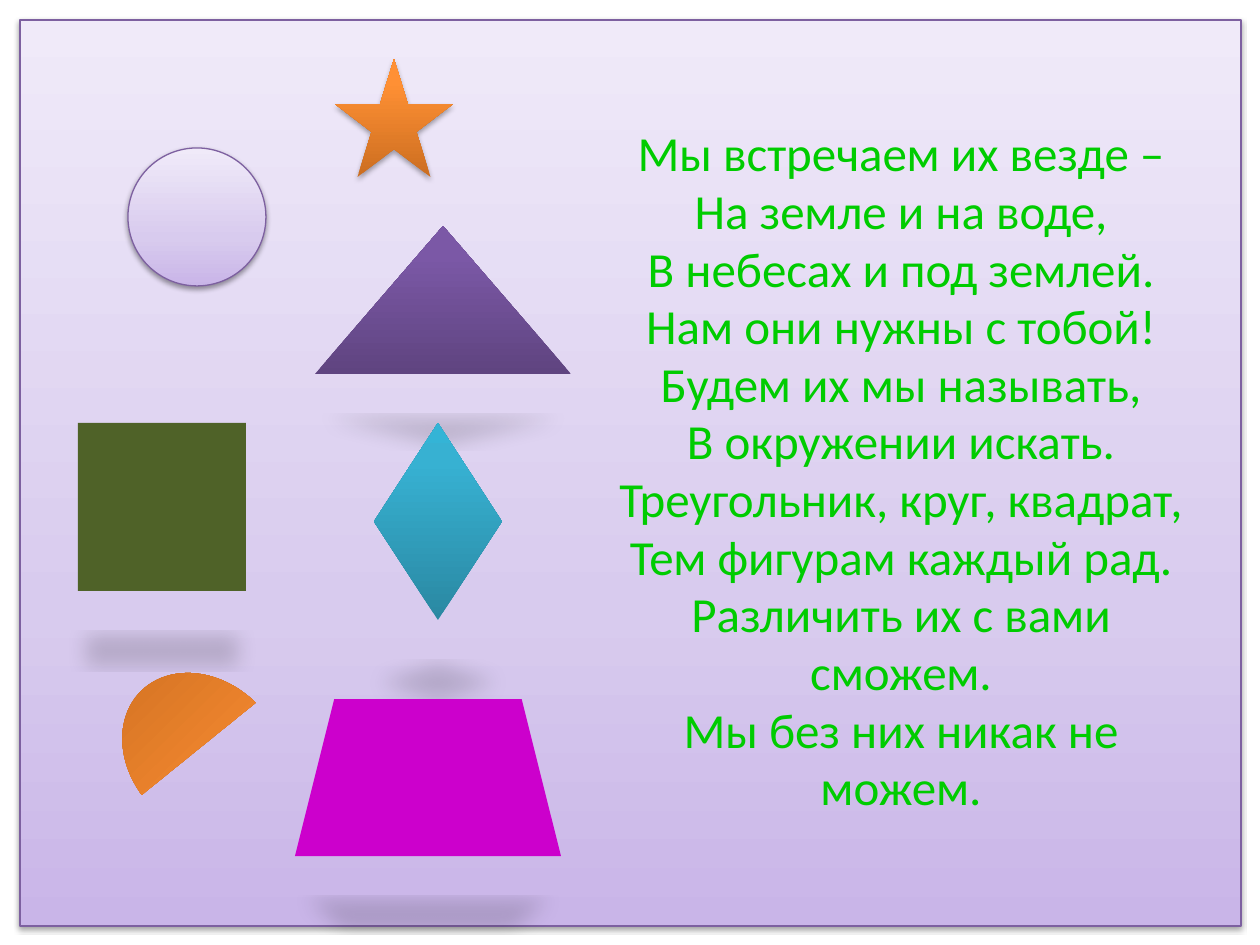
from copy import deepcopy
from dataclasses import dataclass

from lxml import etree
from pptx import Presentation
from pptx import util as u
from pptx.dml.color import RGBColor
from pptx.enum import shapes, text
from pptx.oxml.ns import qn

EMU_PER_PX = 914400 / 126
KIND = shapes.MSO_SHAPE

COLOURS = {
    "outline": "7D60A0",
    "poem": "00CC00",
    "olive": "4F6228",
    "magenta": "CC00CC",
    "shadow": "000000",
}
LILAC = ((0, "C9B5E8"), (0.35, "D8CBEE"), (1, "F0EAF9"))
PURPLE = ((0, "5F4480"), (0.8, "7B58A6"), (1, "7C57A8"))
TEAL = ((0, "2A88A2"), (0.8, "37B1D2"), (1, "34B4D6"))
ORANGE = ((0, "CC6E20"), (0.8, "FF9034"), (1, "FF9136"))

POEM = (
    "Мы встречаем их везде –",
    "На земле и на воде,",
    "В небесах и под землей.",
    "Нам они нужны с тобой!",
    "Будем их мы называть,",
    "В окружении искать.",
    "Треугольник, круг, квадрат,",
    "Тем фигурам каждый рад.",
    "Различить их с вами сможем.",
    "Мы без них никак не можем.",
)


@dataclass(frozen=True)
class Shadow:
    opacity: int
    blur: float
    distance: float
    width: int = 100
    height: int = 100


SOFT = Shadow(38, 3.1, 1.6)
STRONG = Shadow(35, 3.1, 1.8)
FLOOR = Shadow(15, 12, 25, width=90, height=-19)


@dataclass(frozen=True)
class Figure:
    kind: shapes.MSO_SHAPE
    left: int
    top: int
    width: int
    height: int
    paint: str | tuple
    shadow: Shadow
    outlined: bool = False
    rotation: float = 0
    adjustments: tuple = ()


BACKDROP = Figure(KIND.RECTANGLE, 20, 20, 1221, 906, LILAC, SOFT, outlined=True)
FIGURES = (
    Figure(KIND.OVAL, 128, 148, 138, 138, LILAC, SOFT, outlined=True),
    Figure(KIND.ISOSCELES_TRIANGLE, 315, 226, 256, 148, PURPLE, FLOOR),
    Figure(KIND.RECTANGLE, 78, 423, 168, 168, COLOURS["olive"], FLOOR),
    Figure(KIND.DIAMOND, 374, 423, 128, 197, TEAL, FLOOR),
    Figure(KIND.CHORD, 131, 665, 147, 181, ORANGE, FLOOR,
           rotation=135.6, adjustments=(7.41, 107.08)),
    Figure(KIND.TRAPEZOID, 295, 699, 266, 157, COLOURS["magenta"], FLOOR),
    Figure(KIND.STAR_5_POINT, 335, 59, 118, 118, ORANGE, STRONG),
)


def px(length: int) -> u.Emu:
    return u.Emu(round(length * EMU_PER_PX))


def paint_gradient(shape, stops: tuple) -> None:
    """Fill upwards from the first stop to the last."""
    shape.fill.gradient()
    shape.fill.gradient_angle = 90
    stop_list = shape.fill._xPr.find(".//" + qn("a:gsLst"))
    while len(stop_list) < len(stops):
        stop_list.append(deepcopy(stop_list[0]))
    for stop, (position, colour) in zip(shape.fill.gradient_stops, stops):
        stop.position = position
        stop.color.rgb = RGBColor.from_string(colour)


def cast_shadow(shape, shadow: Shadow) -> None:
    shape.shadow.inherit = False
    effects = shape._element.spPr.find(qn("a:effectLst"))
    outer = etree.SubElement(effects, qn("a:outerShdw"), {
        "blurRad": str(u.Pt(shadow.blur)),
        "dist": str(u.Pt(shadow.distance)),
        "dir": "5400000",
        "sx": str(shadow.width * 1000),
        "sy": str(shadow.height * 1000),
        "rotWithShape": "0",
    })
    colour = etree.SubElement(outer, qn("a:srgbClr"), val=COLOURS["shadow"])
    etree.SubElement(colour, qn("a:alpha"), val=str(shadow.opacity * 1000))


def draw_figure(page, figure: Figure) -> None:
    shape = page.shapes.add_shape(
        figure.kind, px(figure.left), px(figure.top), px(figure.width), px(figure.height))
    shape.rotation = figure.rotation
    for index, value in enumerate(figure.adjustments):
        shape.adjustments[index] = value
    if isinstance(figure.paint, str):
        shape.fill.solid()
        shape.fill.fore_color.rgb = RGBColor.from_string(figure.paint)
    else:
        paint_gradient(shape, figure.paint)
    if figure.outlined:
        shape.line.color.rgb = RGBColor.from_string(COLOURS["outline"])
        shape.line.width = u.Pt(0.75)
    else:
        shape.line.fill.background()
    cast_shadow(shape, figure.shadow)


def add_lines(page, lines: tuple, *, left: int, top: int, width: int, height: int,
              bottom_inset: int, size: int, spacing: float, font: str, colour: str) -> None:
    box = page.shapes.add_textbox(px(left), px(top), px(width), px(height))
    frame = box.text_frame
    frame.word_wrap = True
    frame.vertical_anchor = text.MSO_ANCHOR.MIDDLE
    frame.margin_top = 0
    frame.margin_bottom = px(bottom_inset)
    for index, line in enumerate(lines):
        para = frame.add_paragraph() if index else frame.paragraphs[0]
        para.alignment = text.PP_ALIGN.CENTER
        para.line_spacing = spacing
        span = para.add_run()
        span.text = line
        span.font.name = font
        span.font.size = u.Pt(size)
        span.font.color.rgb = RGBColor.from_string(colour)


def main() -> None:
    deck = Presentation()
    deck.slide_width, deck.slide_height = px(1260), px(945)
    page = deck.slides.add_slide(deck.slide_layouts[6])
    draw_figure(page, BACKDROP)
    add_lines(page, POEM, left=591, top=118, width=620, height=768, bottom_inset=61,
              size=28, spacing=0.985, font="Calibri", colour=COLOURS["poem"])
    for figure in FIGURES:
        draw_figure(page, figure)
    deck.save("out.pptx")


if __name__ == "__main__":
    main()
